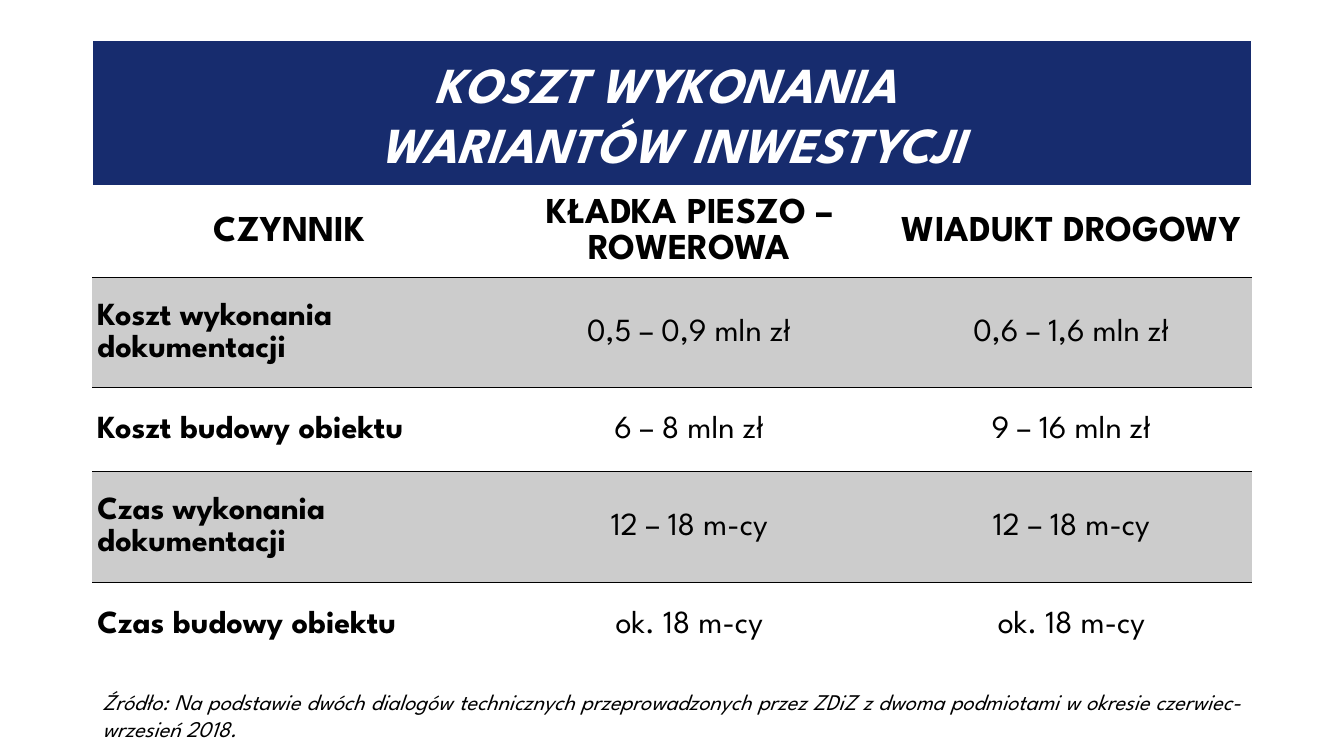
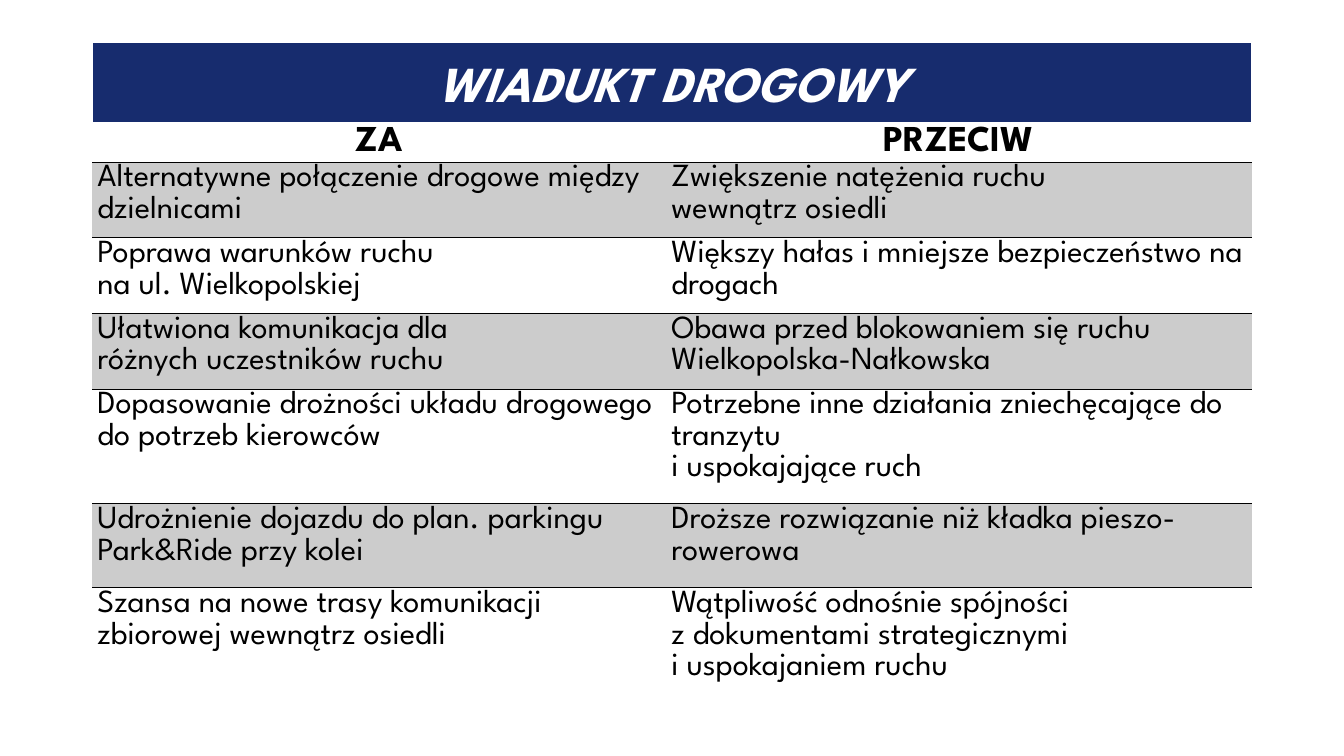
from lxml import etree
from pptx import Presentation
from pptx.dml.color import RGBColor
from pptx.enum.text import MSO_ANCHOR, MSO_AUTO_SIZE, PP_ALIGN
from pptx.oxml.ns import qn
from pptx.util import Pt

NAVY = RGBColor(0x17, 0x2C, 0x6E)
WHITE = RGBColor(0xFF, 0xFF, 0xFF)
BLACK = RGBColor(0x00, 0x00, 0x00)
BAND_GREY = RGBColor(0xCC, 0xCC, 0xCC)
FONT = "League Spartan"
NO_STYLE_NO_GRID = "{2D5ABB26-0587-4C30-8999-92F81FD0307C}"
LEFT, WIDTH = 66, 828

COSTS = [
    ("CZYNNIK", "KŁADKA PIESZO – ROWEROWA", "WIADUKT DROGOWY"),
    ("Koszt wykonania dokumentacji", "0,5 – 0,9 mln zł", "0,6 – 1,6 mln zł"),
    ("Koszt budowy obiektu", "6 – 8 mln zł", "9 – 16 mln zł"),
    ("Czas wykonania dokumentacji", "12 – 18 m-cy", "12 – 18 m-cy"),
    ("Czas budowy obiektu", "ok. 18 m-cy", "ok. 18 m-cy"),
]
ARGUMENTS = [
    ("ZA", "PRZECIW"),
    ("Alternatywne połączenie drogowe między dzielnicami",
     "Zwiększenie natężenia ruchu \vwewnątrz osiedli"),
    ("Poprawa warunków ruchu \vna ul. Wielkopolskiej",
     "Większy hałas i mniejsze bezpieczeństwo na drogach"),
    ("Ułatwiona komunikacja dla\vróżnych uczestników ruchu",
     "Obawa przed blokowaniem się ruchu Wielkopolska-Nałkowska"),
    ("Dopasowanie drożności układu drogowego do potrzeb kierowców",
     "Potrzebne inne działania zniechęcające do tranzytu \vi uspokajające ruch"),
    ("Udrożnienie dojazdu do plan. parkingu Park&Ride przy kolei",
     "Droższe rozwiązanie niż kładka pieszo-rowerowa"),
    ("Szansa na nowe trasy komunikacji zbiorowej wewnątrz osiedli",
     "Wątpliwość odnośnie spójności \vz dokumentami strategicznymi \vi uspokajaniem ruchu"),
]
SLIDES = [
    dict(title="KOSZT WYKONANIA \vWARIANTÓW INWESTYCJI", top=29, title_height=104,
         rows=COSTS, widths=(282, 289, 257), heights=(65, 79, 60, 79, 60),
         anchor=MSO_ANCHOR.MIDDLE, value_align=PP_ALIGN.CENTER, bold_labels=True, rule=1,
         source="Źródło: Na podstawie dwóch dialogów technicznych przeprowadzonych "
                "przez ZDiZ z dwoma podmiotami w okresie czerwiec-wrzesień 2018."),
    dict(title="WIADUKT DROGOWY", top=30, title_height=58,
         rows=ARGUMENTS, widths=(410, 418), heights=(28, 54, 54, 54, 82, 60, 54),
         anchor=MSO_ANCHOR.TOP, value_align=PP_ALIGN.LEFT, bold_labels=False, rule=0.75,
         source=None),
]


def format_paragraph(paragraph, size, color, align, bold=False, italic=False):
    paragraph.alignment = align
    font = paragraph.font
    font.name, font.size, font.bold, font.italic = FONT, Pt(size), bold, italic
    font.color.rgb = color


def add_bottom_rule(cell, width):
    """Draw a black bottom border; call it before the cell gets its fill."""
    line = etree.SubElement(cell._tc.get_or_add_tcPr(), qn("a:lnB"), w=str(Pt(width)))
    fill = etree.SubElement(line, qn("a:solidFill"))
    etree.SubElement(fill, qn("a:srgbClr"), val=str(BLACK))


presentation = Presentation()
presentation.slide_width, presentation.slide_height = Pt(960), Pt(540)

for content in SLIDES:
    slide = presentation.slides.add_slide(presentation.slide_layouts[5])

    title = slide.shapes.title
    title.left, title.top = Pt(LEFT), Pt(content["top"])
    title.width, title.height = Pt(WIDTH), Pt(content["title_height"])
    title.fill.solid()
    title.fill.fore_color.rgb = NAVY
    title.line.color.rgb = WHITE
    title.line.width = Pt(1)
    title.text_frame.text = content["title"]
    title.text_frame.auto_size = MSO_AUTO_SIZE.NONE
    title.text_frame.vertical_anchor = MSO_ANCHOR.MIDDLE
    format_paragraph(title.text_frame.paragraphs[0], 36, WHITE, PP_ALIGN.CENTER,
                     bold=True, italic=True)

    rows, heights = content["rows"], content["heights"]
    table_top = content["top"] + content["title_height"]
    table = slide.shapes.add_table(len(rows), len(rows[0]), Pt(LEFT), Pt(table_top),
                                   Pt(WIDTH), Pt(sum(heights))).table
    table._tbl.tblPr.find(qn("a:tableStyleId")).text = NO_STYLE_NO_GRID
    for column, width in zip(table.columns, content["widths"]):
        column.width = Pt(width)

    for row_index, texts in enumerate(rows):
        table.rows[row_index].height = Pt(heights[row_index])
        is_header = row_index == 0
        for column_index, text in enumerate(texts):
            cell = table.cell(row_index, column_index)
            cell.margin_left = cell.margin_right = Pt(3.6)
            cell.margin_top = cell.margin_bottom = Pt(0)
            cell.vertical_anchor = content["anchor"]
            if row_index < len(rows) - 1:
                add_bottom_rule(cell, content["rule"])
            if row_index % 2:
                cell.fill.solid()
                cell.fill.fore_color.rgb = BAND_GREY
            else:
                cell.fill.background()

            is_label = column_index == 0
            if is_header:
                align = PP_ALIGN.CENTER
            else:
                align = PP_ALIGN.LEFT if is_label else content["value_align"]
            cell.text_frame.text = text
            paragraph = cell.text_frame.paragraphs[0]
            paragraph.line_spacing = 1.07
            format_paragraph(paragraph, 26 if is_header else 23, BLACK, align,
                             bold=is_header or (is_label and content["bold_labels"]))

    if content["source"]:
        source_box = slide.shapes.add_textbox(Pt(LEFT), Pt(488), Pt(WIDTH), Pt(46))
        source_box.text_frame.word_wrap = True
        source_box.text_frame.text = content["source"]
        format_paragraph(source_box.text_frame.paragraphs[0], 16, BLACK,
                         PP_ALIGN.JUSTIFY, italic=True)

presentation.save("out.pptx")
